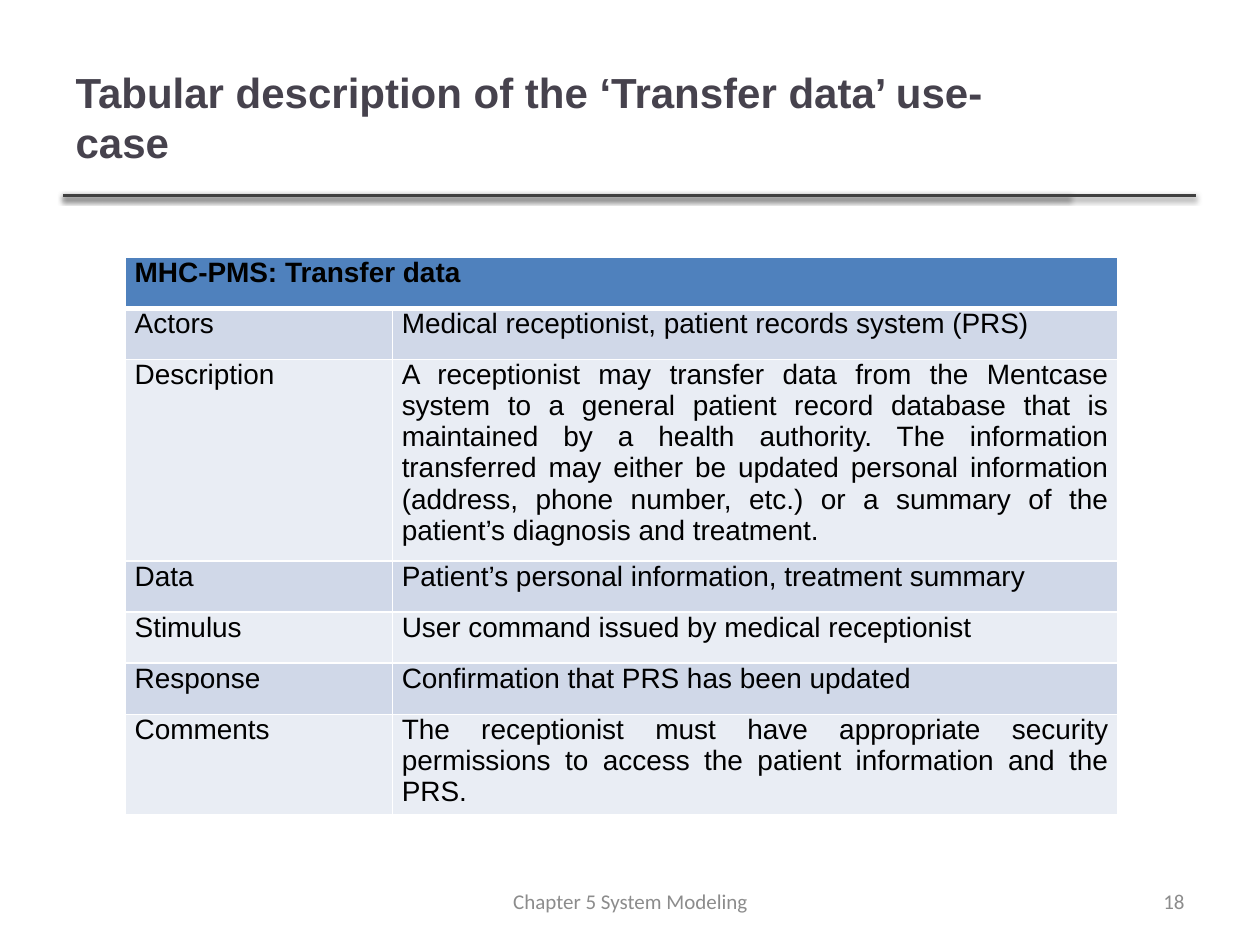
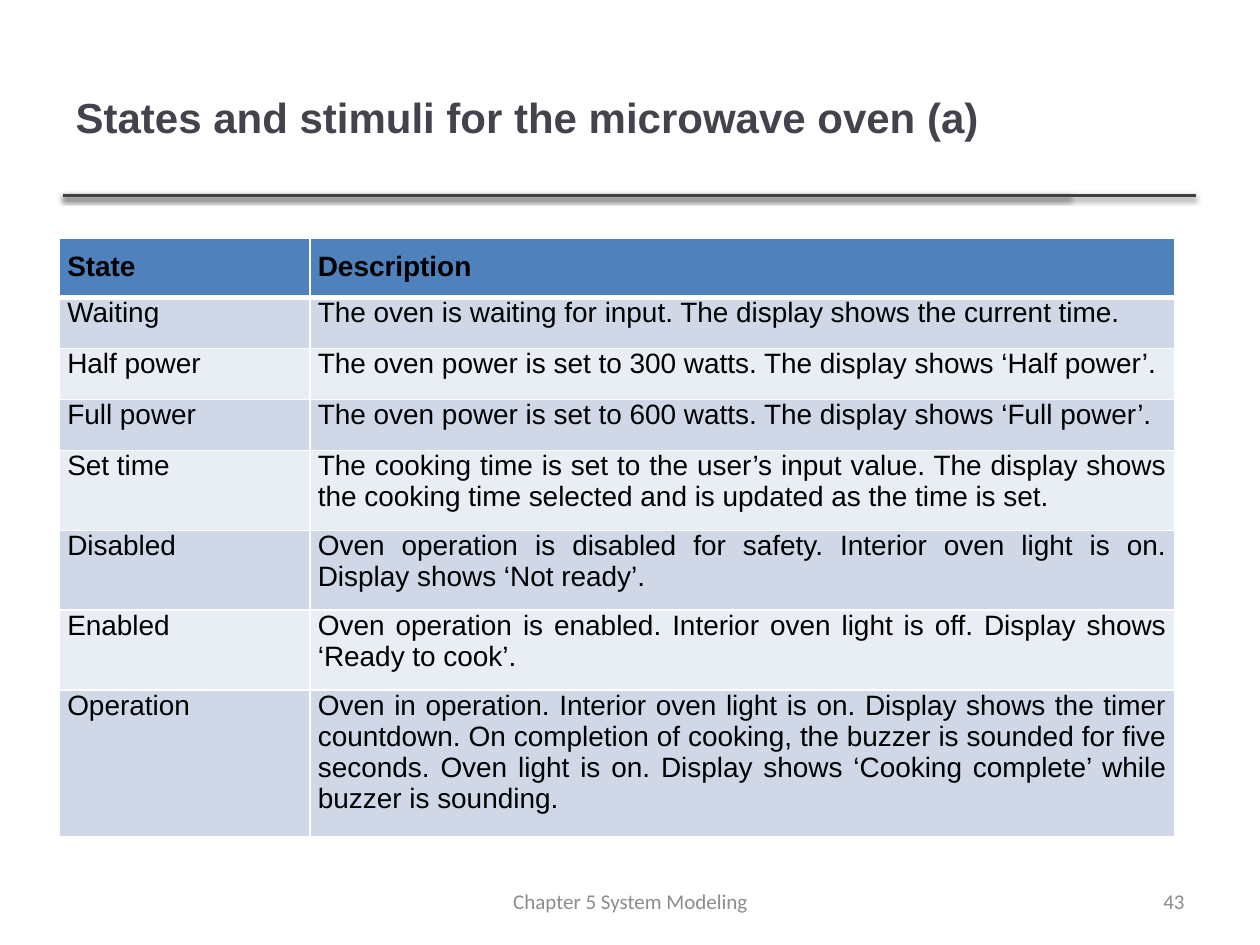
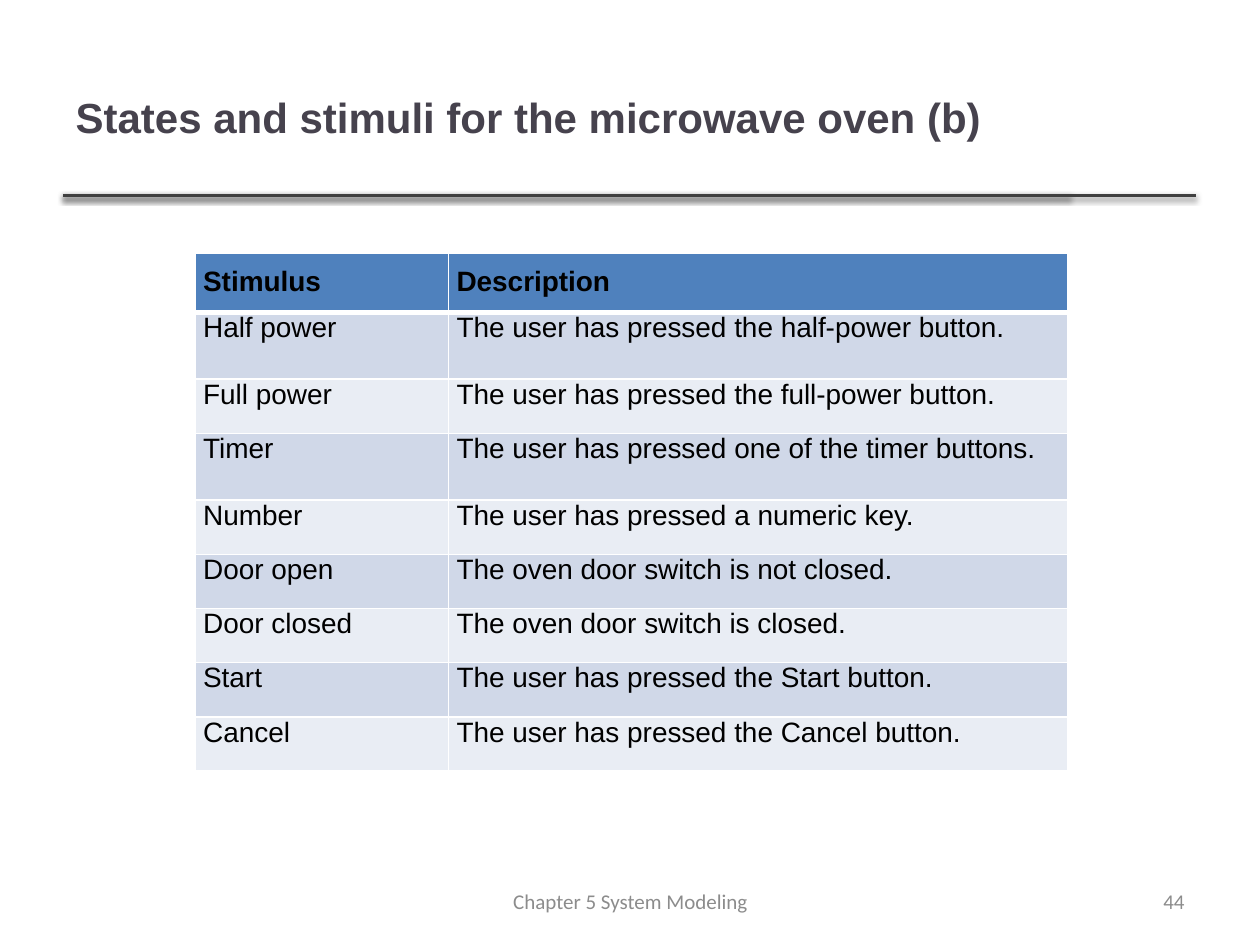
from lxml.etree import SubElement
from pptx import Presentation
from pptx.dml.color import RGBColor
from pptx.enum.shapes import MSO_CONNECTOR
from pptx.enum.text import MSO_ANCHOR, MSO_AUTO_SIZE, PP_ALIGN
from pptx.oxml import parse_xml
from pptx.oxml.ns import nsdecls, qn
from pptx.util import Pt

TITLE_COLOR = RGBColor(0x46, 0x42, 0x4D)
RULE_COLOR = RGBColor(0x40, 0x40, 0x40)
FOOTER_COLOR = RGBColor(0x8C, 0x8C, 0x8C)
TABLE_TEXT = RGBColor(0x00, 0x00, 0x00)
BORDER_COLOR = RGBColor(0xFF, 0xFF, 0xFF)
HEADER_FILL = RGBColor(0x4F, 0x81, 0xBD)
BAND_FILLS = (RGBColor(0xE9, 0xED, 0xF4), RGBColor(0xD0, 0xD8, 0xE8))

FOOTER_TEXT = "Chapter 5 System Modeling"
RULE_LEFT, RULE_TOP = 36, 111.6
RULE_ENDS = (611.3, 683.3)

TRANSFER_ROWS = [
    ("MHC-PMS: Transfer data", ""),
    ("Actors", "Medical receptionist, patient records system (PRS)"),
    ("Description",
     "A receptionist may transfer data from the Mentcase system to a general "
     "patient record database that is maintained by a health authority. The "
     "information transferred may either be updated personal information "
     "(address, phone number, etc.) or a summary of the patient’s diagnosis "
     "and treatment."),
    ("Data", "Patient’s personal information, treatment summary"),
    ("Stimulus", "User command issued by medical receptionist"),
    ("Response", "Confirmation that PRS has been updated"),
    ("Comments",
     "The receptionist must have appropriate security permissions to access "
     "the patient information and the PRS."),
]

STATE_ROWS = [
    ("State", "Description"),
    ("Waiting", "The oven is waiting for input. The display shows the current time."),
    ("Half power", "The oven power is set to 300 watts. The display shows ‘Half power’."),
    ("Full power", "The oven power is set to 600 watts. The display shows ‘Full power’."),
    ("Set time",
     "The cooking time is set to the user’s input value. The display shows "
     "the cooking time selected and is updated as the time is set."),
    ("Disabled",
     "Oven operation is disabled for safety. Interior oven light is on. "
     "Display shows ‘Not ready’."),
    ("Enabled",
     "Oven operation is enabled. Interior oven light is off. Display shows "
     "‘Ready to cook’."),
    ("Operation",
     "Oven in operation. Interior oven light is on. Display shows the timer "
     "countdown. On completion of cooking, the buzzer is sounded for five "
     "seconds. Oven light is on. Display shows ‘Cooking complete’ while "
     "buzzer is sounding."),
]

STIMULUS_ROWS = [
    ("Stimulus", "Description"),
    ("Half power", "The user has pressed the half-power button."),
    ("Full power", "The user has pressed the full-power button."),
    ("Timer", "The user has pressed one of the timer buttons."),
    ("Number", "The user has pressed a numeric key."),
    ("Door open", "The oven door switch is not closed."),
    ("Door closed", "The oven door switch is closed."),
    ("Start", "The user has pressed the Start button."),
    ("Cancel", "The user has pressed the Cancel button."),
]


def write_text(text_frame, text, *, size, color, font="Arial", bold=False,
               align=PP_ALIGN.LEFT):
    paragraph = text_frame.paragraphs[0]
    paragraph.alignment = align
    run = paragraph.add_run()
    run.text = text
    run.font.name = font
    run.font.size = Pt(size)
    run.font.bold = bold
    run.font.color.rgb = color


def add_title(slide, text):
    title = slide.shapes.title
    title.left, title.top, title.width, title.height = map(Pt, (36, 21.6, 574.6, 90))
    title.text_frame.auto_size = MSO_AUTO_SIZE.NONE
    title.text_frame.vertical_anchor = MSO_ANCHOR.MIDDLE
    write_text(title.text_frame, text, size=24, color=TITLE_COLOR, bold=True)


def add_rule(slide, right):
    """Draw one shadowed line below the title."""
    rule = slide.shapes.add_connector(
        MSO_CONNECTOR.STRAIGHT, Pt(RULE_LEFT), Pt(RULE_TOP), Pt(right), Pt(RULE_TOP))
    rule.line.color.rgb = RULE_COLOR
    rule.line.width = Pt(2)
    rule._element.spPr.append(parse_xml(
        f'<a:effectLst {nsdecls("a")}>'
        f'<a:outerShdw blurRad="{Pt(3.1)}" dist="{Pt(1.6)}" dir="5400000" rotWithShape="0">'
        '<a:srgbClr val="000000"><a:alpha val="38000"/></a:srgbClr>'
        '</a:outerShdw></a:effectLst>'))


def add_footer_text(slide, text, left, width, align):
    box = slide.shapes.add_textbox(Pt(left), Pt(500.4), Pt(width), Pt(28.8))
    box.text_frame.word_wrap = True
    box.text_frame.vertical_anchor = MSO_ANCHOR.MIDDLE
    write_text(box.text_frame, text, size=12, color=FOOTER_COLOR,
               font="Calibri", align=align)


def set_borders(cell, top, bottom):
    properties = cell._tc.get_or_add_tcPr()
    for side, width in (("L", 1), ("R", 1), ("T", top), ("B", bottom)):
        line = SubElement(properties, qn(f"a:ln{side}"), w=str(Pt(width)))
        fill = SubElement(line, qn("a:solidFill"))
        SubElement(fill, qn("a:srgbClr"), val=str(BORDER_COLOR))


def format_cell(cell, text, row_index, side_margin, header_top, bottom_margin):
    is_header = row_index == 0
    set_borders(cell, top=3 if row_index == 1 else 1, bottom=3 if is_header else 1)
    cell.fill.solid()
    cell.fill.fore_color.rgb = HEADER_FILL if is_header else BAND_FILLS[row_index % 2]
    cell.margin_left = cell.margin_right = Pt(side_margin)
    cell.margin_top = Pt(header_top if is_header else 0)
    cell.margin_bottom = Pt(bottom_margin)
    if text:
        write_text(cell.text_frame, text, size=16, color=TABLE_TEXT,
                   bold=is_header, align=PP_ALIGN.JUSTIFY)


def add_description_table(slide, rows, *, left, top, height, column_widths,
                          row_heights, side_margin=4.5, header_top=7.2,
                          bottom_margin=7.2):
    """Add a two-column table; a header with no second text spans both columns."""
    frame = slide.shapes.add_table(len(rows), 2, Pt(left), Pt(top),
                                   Pt(sum(column_widths)), Pt(height))
    table = frame.table
    for column, width in zip(table.columns, column_widths):
        column.width = Pt(width)
    for row_index, (row, row_height) in enumerate(zip(table.rows, row_heights)):
        row.height = Pt(row_height)
        for cell, text in zip(row.cells, rows[row_index]):
            format_cell(cell, text, row_index, side_margin, header_top, bottom_margin)
    if not rows[0][1]:
        table.cell(0, 0).merge(table.cell(0, 1))
    frame.height = Pt(height)


def add_slide(presentation, title, number):
    slide = presentation.slides.add_slide(presentation.slide_layouts.get_by_name("Title Only"))
    for right in RULE_ENDS:
        add_rule(slide, right)
    add_title(slide, title)
    add_footer_text(slide, FOOTER_TEXT, 246.2, 228.2, PP_ALIGN.CENTER)
    add_footer_text(slide, str(number), 516.2, 167.8, PP_ALIGN.RIGHT)
    return slide


def main():
    presentation = Presentation()
    presentation.slide_width, presentation.slide_height = Pt(720), Pt(540)

    slide = add_slide(presentation, "Tabular description of the ‘Transfer data’ use-case", 18)
    add_description_table(slide, TRANSFER_ROWS, left=71.6, top=147, height=319,
                          column_widths=(152.6, 414.7), row_heights=[29.2] * 7,
                          side_margin=5.4, header_top=0, bottom_margin=0)

    slide = add_slide(presentation, "States and stimuli for the microwave oven (a)", 43)
    add_description_table(slide, STATE_ROWS, left=34, top=136.2, height=342,
                          column_widths=(143.2, 493.9), row_heights=[29.2] * 8)

    slide = add_slide(presentation, "States and stimuli for the microwave oven (b)", 44)
    add_description_table(slide, STIMULUS_ROWS, left=111.6, top=144.8, height=296,
                          column_widths=(144.8, 353.5),
                          row_heights=[31, 38.2] * 2 + [31] * 5)

    presentation.save("out.pptx")


if __name__ == "__main__":
    main()
